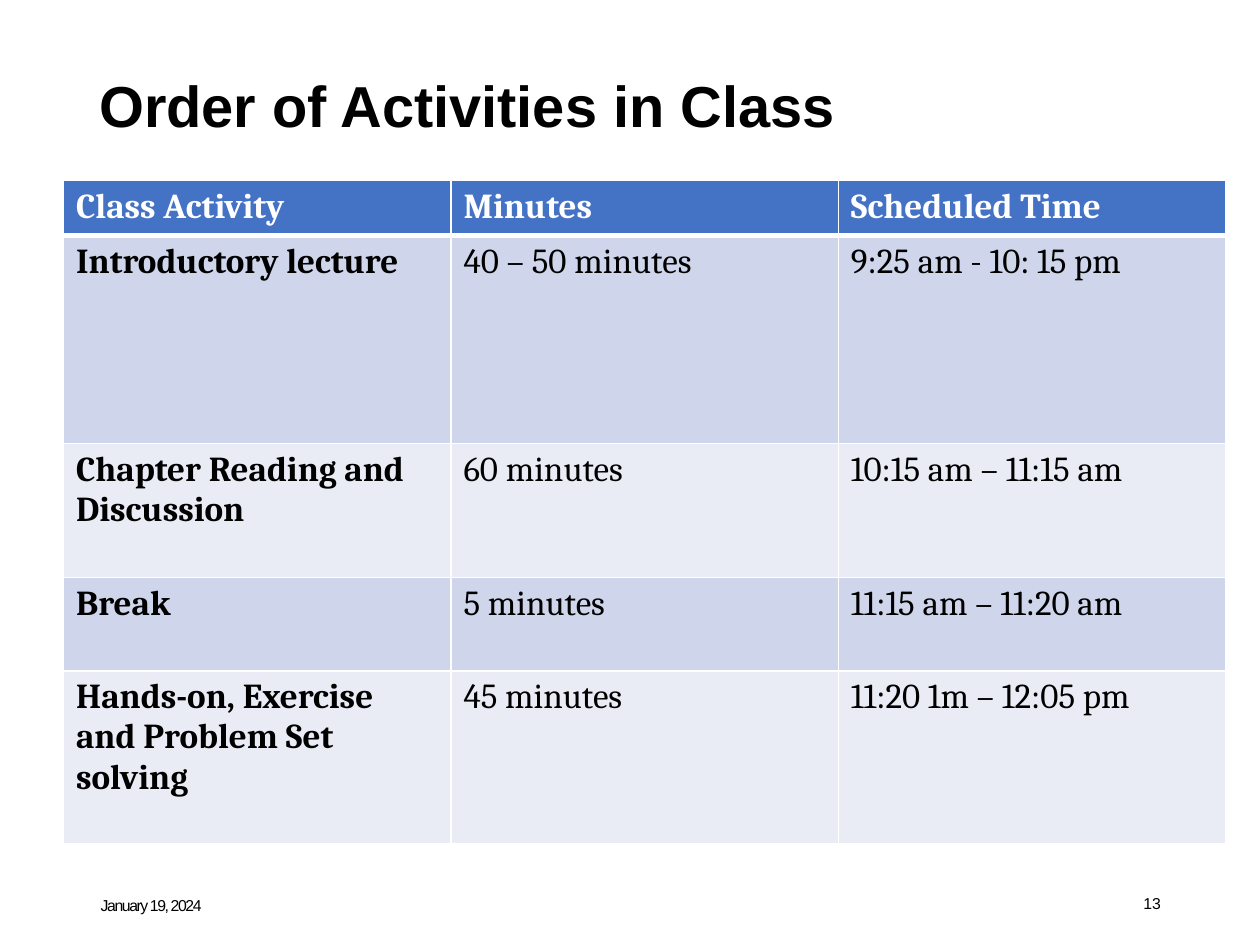
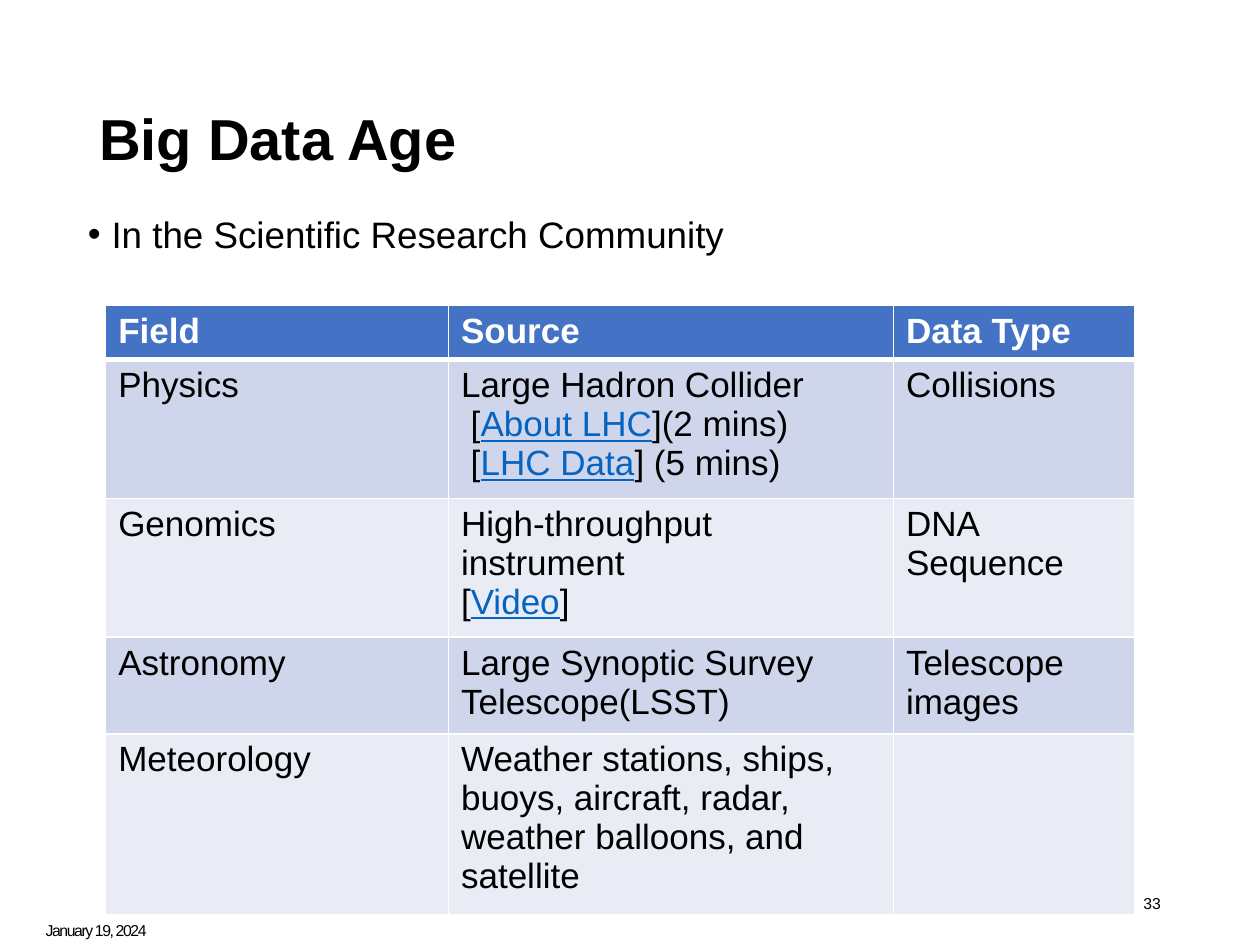
from dataclasses import dataclass
from typing import NamedTuple

from lxml.etree import SubElement
from pptx import Presentation
from pptx.dml.color import RGBColor as Rgb
from pptx.enum.text import MSO_ANCHOR as Anchor, PP_ALIGN as Align
from pptx.oxml import parse_xml
from pptx.oxml.ns import nsdecls, qn
from pptx.util import Cm, Pt


@dataclass(frozen=True)
class Theme:
    text: Rgb = Rgb.from_string("000000")
    light: Rgb = Rgb.from_string("FFFFFF")
    link: Rgb = Rgb.from_string("0563C1")
    header: Rgb = Rgb.from_string("4472C4")
    bands: tuple = (Rgb.from_string("CFD5EA"), Rgb.from_string("E9EBF5"))
    sans: str = "Arial"
    serif: str = "Cambria"
    title_size: int = 33
    body_size: int = 21
    table_size: int = 20
    footer_size: int = 9
    grid_width: int = 1
    header_rule_width: int = 3


THEME = Theme()
LINK_MARK = "|"


class Box(NamedTuple):
    """Left, top, width and height in centimetres."""
    left: float
    top: float
    width: float
    height: float

    def lengths(self):
        return [Cm(length) for length in self]


def style_font(font, size, color=THEME.text, name=THEME.sans, bold=False):
    font.size, font.name, font.bold = Pt(size), name, bold
    font.color.rgb = color


def add_text(page, box, text, size, anchor=Anchor.MIDDLE, bold=False):
    """Add a one-paragraph text box and return its paragraph."""
    frame = page.shapes.add_textbox(*box.lengths()).text_frame
    frame.word_wrap = True
    frame.vertical_anchor = anchor
    frame.text = text
    para = frame.paragraphs[0]
    style_font(para.runs[0].font, size, bold=bold)
    return para


def add_title(page, box, text):
    add_text(page, box, text, THEME.title_size, bold=True).line_spacing = 0.9


def add_bullet(page, box, text):
    para = add_text(page, box, text, THEME.body_size, Anchor.TOP)
    para.line_spacing = 0.9
    para.space_before = Pt(7.5)
    properties = para._p.get_or_add_pPr()
    properties.set("marL", str(Cm(0.48)))
    properties.set("indent", str(Cm(-0.48)))
    SubElement(properties, qn("a:buFont")).set("typeface", THEME.sans)
    SubElement(properties, qn("a:buChar")).set("char", "•")


def add_footer_text(page, box, text, line_points, indent, tracking):
    """Tracking is in hundredths of a point."""
    para = add_text(page, box, text, THEME.footer_size)
    para.line_spacing = Pt(line_points)
    para._p.get_or_add_pPr().set("marL", str(Cm(indent)))
    para.runs[0].font._element.set("spc", str(tracking))
    return para


def add_footers(page, date_box, number):
    add_footer_text(page, date_box, "January 19, 2024", 15.8, 0.03, -80)
    number_box = Box(17.93, 17.65, 5.72, 1.02)
    para = add_footer_text(page, number_box, number, 13.7, 0.1, -10)
    para.alignment = Align.RIGHT


def set_borders(cell, top, bottom):
    widths = {"L": THEME.grid_width, "R": THEME.grid_width, "T": top, "B": bottom}
    properties = cell._tc.get_or_add_tcPr()
    for position, (side, width) in enumerate(widths.items()):
        properties.insert(position, parse_xml(
            f'<a:ln{side} {nsdecls("a")} w="{Pt(width)}"><a:solidFill>'
            f'<a:srgbClr val="{THEME.light}"/></a:solidFill></a:ln{side}>'))


def fill_cell(cell, text, color, font_name, bold):
    """Write one paragraph a line; text between link marks looks like a link."""
    frame = cell.text_frame
    for index, line in enumerate(text.split("\n")):
        para = frame.add_paragraph() if index else frame.paragraphs[0]
        style_font(para.font, THEME.table_size, color, font_name, bold)
        for order, piece in enumerate(line.split(LINK_MARK)):
            if not piece:
                continue
            span = para.add_run()
            span.text = piece
            is_link = order % 2 == 1
            style_font(span.font, THEME.table_size,
                       THEME.link if is_link else color, font_name, bold)
            if is_link:
                span.font.underline = True


def add_banded_table(page, box, rows, column_widths, row_heights,
                     font_name=THEME.sans, bold_first_column=False):
    table = page.shapes.add_table(len(rows), len(column_widths),
                                  *box.lengths()).table
    for column, width in zip(table.columns, column_widths):
        column.width = Cm(width)
    for row_index, (texts, height) in enumerate(zip(rows, row_heights)):
        table.rows[row_index].height = Cm(height)
        is_header = row_index == 0
        fill = THEME.header if is_header else THEME.bands[(row_index - 1) % 2]
        color = THEME.light if is_header else THEME.text
        top = THEME.header_rule_width if row_index == 1 else THEME.grid_width
        bottom = THEME.header_rule_width if is_header else THEME.grid_width
        for column_index, text in enumerate(texts):
            cell = table.cell(row_index, column_index)
            cell.fill.solid()
            cell.fill.fore_color.rgb = fill
            set_borders(cell, top, bottom)
            bold = is_header or (bold_first_column and column_index == 0)
            fill_cell(cell, text, color, font_name, bold)


def build_activities(page):
    add_title(page, Box(1.75, 0.36, 21.9, 3.68), "Order of Activities in Class")
    rows = [
        ("Class Activity", "Minutes", "Scheduled Time"),
        ("Introductory lecture", "40 – 50 minutes", "9:25 am - 10: 15 pm"),
        ("Chapter Reading and Discussion", "60 minutes", "10:15 am – 11:15 am"),
        ("Break", "5 minutes", "11:15 am – 11:20 am"),
        ("Hands-on, Exercise and Problem Set solving", "45 minutes",
         "11:20 1m – 12:05 pm"),
    ]
    box = Box(1.28, 3.64, 23.43, 13.32)
    add_banded_table(page, box, rows, [box.width / 3] * 3,
                     [1.06, 4.2, 2.7, 1.88, 3.48], THEME.serif,
                     bold_first_column=True)
    add_footers(page, Box(1.75, 17.65, 5.72, 1.02), "13")


def build_big_data(page):
    add_title(page, Box(1.75, 1.02, 21.9, 3.68), "Big Data Age")
    add_bullet(page, Box(1.52, 4.24, 21.9, 12.09),
               "In the Scientific Research Community")
    rows = [
        ("Field", "Source", "Data Type"),
        ("Physics", "Large Hadron Collider\n [|About LHC|](2 mins)\n"
                    " [|LHC Data|] (5 mins)", "Collisions"),
        ("Genomics", "High-throughput instrument\n[|Video|]", "DNA Sequence"),
        ("Astronomy", "Large Synoptic Survey Telescope(LSST)",
         "Telescope images"),
        ("Meteorology", "Weather stations, ships, buoys, aircraft, radar, "
                        "weather balloons, and satellite", ""),
    ]
    add_banded_table(page, Box(2.13, 6.15, 20.75, 11.49), rows,
                     [6.91, 8.97, 4.87], [1.03, 2.62, 2.61, 1.83, 3.4])
    add_footers(page, Box(0.64, 18.16, 5.72, 1.02), "33")


def main():
    deck = Presentation()
    deck.slide_width, deck.slide_height = Cm(25.4), Cm(19.05)
    for build in (build_activities, build_big_data):
        build(deck.slides.add_slide(deck.slide_layouts[6]))
    deck.save("out.pptx")


if __name__ == "__main__":
    main()
